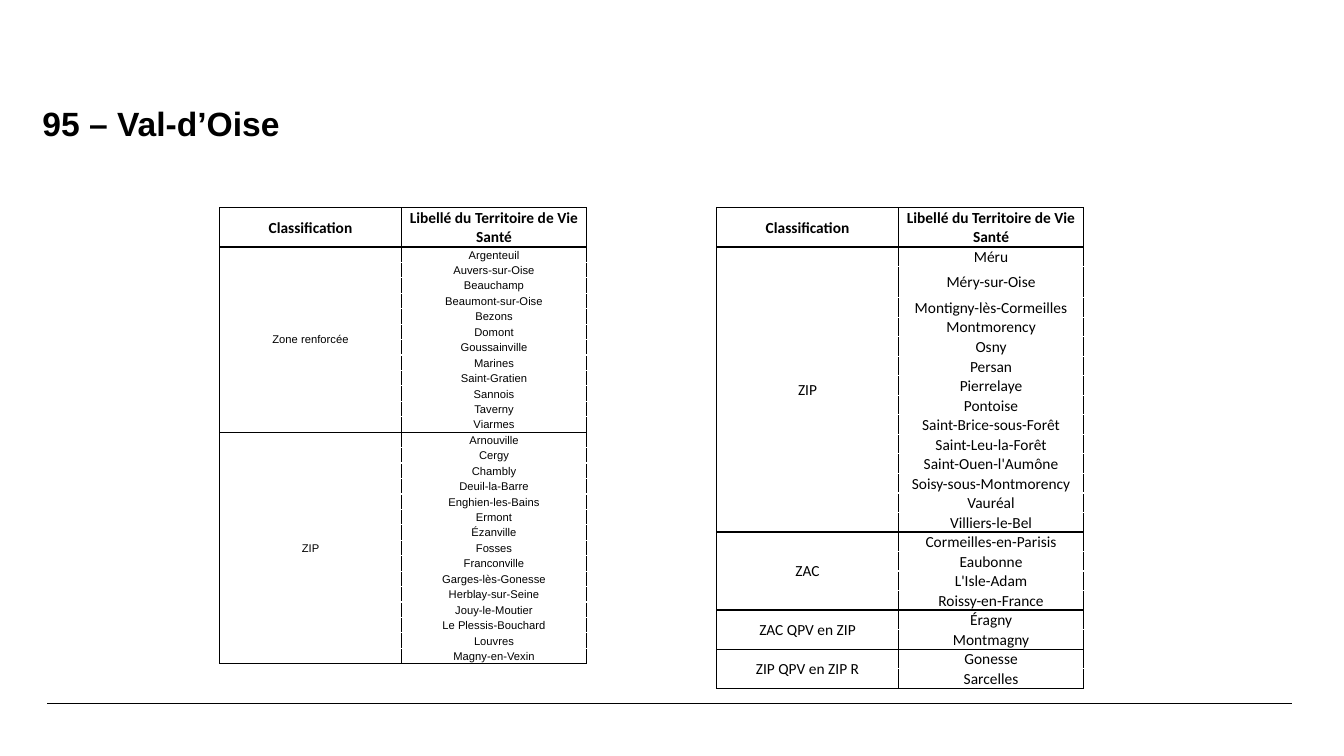
from pptx import Presentation
from pptx.dml.color import RGBColor
from pptx.enum.shapes import MSO_CONNECTOR
from pptx.enum.text import MSO_ANCHOR, PP_ALIGN
from pptx.oxml.ns import qn
from pptx.util import Inches, Pt
from lxml import etree

STRAIGHT = MSO_CONNECTOR.STRAIGHT
CENTER = PP_ALIGN.CENTER
MIDDLE = MSO_ANCHOR.MIDDLE

THEME = {
    "ink": "000000", "paper": "FFFFFF",
    "title": ("Arial", 24, True),
    "header": ("Calibri", 11, True),
    "left body": ("Arial", 8, False),
    "right body": ("Calibri", 11, False),
    "rule": 0.8, "border": 1,
}

HEADERS = ("Classification", "Libellé du Territoire de Vie Santé")
COLUMN_WIDTHS = (1.8, 1.84)
TABLE_TOP = 2.06
HEADER_HEIGHT = 0.39
LEFT_ROW_HEIGHT = (4.53 - HEADER_HEIGHT) / 27
RIGHT_ROW_HEIGHT = 0.15
TALL_ROWS = {"Méru": 0.19, "Méry-sur-Oise": 0.31}

LEFT_ZONES = {
    "Zone renforcée": [
        "Argenteuil", "Auvers-sur-Oise", "Beauchamp", "Beaumont-sur-Oise", "Bezons",
        "Domont", "Goussainville", "Marines", "Saint-Gratien", "Sannois", "Taverny",
        "Viarmes"],
    "ZIP": [
        "Arnouville", "Cergy", "Chambly", "Deuil-la-Barre", "Enghien-les-Bains",
        "Ermont", "Ézanville", "Fosses", "Franconville", "Garges-lès-Gonesse",
        "Herblay-sur-Seine", "Jouy-le-Moutier", "Le Plessis-Bouchard", "Louvres",
        "Magny-en-Vexin"],
}
RIGHT_ZONES = {
    "ZIP": [
        "Méru", "Méry-sur-Oise", "Montigny-lès-Cormeilles", "Montmorency", "Osny",
        "Persan", "Pierrelaye", "Pontoise", "Saint-Brice-sous-Forêt",
        "Saint-Leu-la-Forêt", "Saint-Ouen-l'Aumône", "Soisy-sous-Montmorency",
        "Vauréal", "Villiers-le-Bel"],
    "ZAC": ["Cormeilles-en-Parisis", "Eaubonne", "L'Isle-Adam", "Roissy-en-France"],
    "ZAC QPV en ZIP": ["Éragny", "Montmagny"],
    "ZIP QPV en ZIP R": ["Gonesse", "Sarcelles"],
}


def style_text(paragraph, style):
    for run in paragraph.runs:
        run.font.name, size, run.font.bold = THEME[style]
        run.font.size = Pt(size)
        run.font.color.rgb = RGBColor.from_string(THEME["ink"])


def fill_cell(cell, text, style, top="ink", bottom="ink"):
    """Write one cell; its sides are always ink, top and bottom as named."""
    cell.margin_left = cell.margin_right = cell.margin_top = Inches(0.01)
    cell.margin_bottom = 0
    cell.vertical_anchor = MIDDLE
    cell.text_frame.text = text
    paragraph = cell.text_frame.paragraphs[0]
    paragraph.alignment = CENTER
    style_text(paragraph, style)
    properties = cell._tc.get_or_add_tcPr()
    for side, color in (("L", "ink"), ("R", "ink"), ("T", top), ("B", bottom)):
        border = etree.SubElement(properties, qn(f"a:ln{side}"), w=str(Pt(THEME["border"])))
        solid = etree.SubElement(border, qn("a:solidFill"))
        etree.SubElement(solid, qn("a:srgbClr"), val=THEME[color])
    cell.fill.solid()
    cell.fill.fore_color.rgb = RGBColor.from_string(THEME["paper"])


prs = Presentation()
prs.slide_width, prs.slide_height = Inches(13.33), Inches(7.5)
slide = prs.slides.add_slide(prs.slide_layouts[6])

# Footer rules
for start, end in ((0.47, 12.76), (0.53, 12.81)):
    rule = slide.shapes.add_connector(
        STRAIGHT, Inches(start), Inches(6.98), Inches(end), Inches(6.98))
    rule.line.color.rgb = RGBColor.from_string(THEME["ink"])
    rule.line.width = Pt(THEME["rule"])
    etree.SubElement(rule._element.spPr, qn("a:effectLst"))

# Title
title = slide.shapes.add_textbox(
    Inches(0.29), Inches(1.02), Inches(10.12), Inches(0.68)).text_frame
title.word_wrap = True
title.margin_left = title.margin_right = title.margin_top = title.margin_bottom = 0
title.text = "95 – Val-d’Oise"
heading = title.paragraphs[0]
heading.space_after = Pt(6.7)
heading._p.get_or_add_pPr().set("marL", str(Inches(0.13)))
style_text(heading, "title")

# Classification tables
for left, zones, body, row_height in (
        (2.18, LEFT_ZONES, "left body", LEFT_ROW_HEIGHT),
        (7.11, RIGHT_ZONES, "right body", RIGHT_ROW_HEIGHT)):
    towns = [town for group in zones.values() for town in group]
    heights = [HEADER_HEIGHT] + [TALL_ROWS.get(town, row_height) for town in towns]
    table = slide.shapes.add_table(
        len(heights), len(HEADERS), Inches(left), Inches(TABLE_TOP),
        Inches(sum(COLUMN_WIDTHS)), Inches(sum(heights))).table
    table.first_row = table.horz_banding = False
    for column, width in zip(table.columns, COLUMN_WIDTHS):
        column.width = Inches(width)
    for row, height in zip(table.rows, heights):
        row.height = Inches(height)
    for index, header in enumerate(HEADERS):
        fill_cell(table.cell(0, index), header, "header")

    first = 1
    for zone, group in zones.items():
        last = first + len(group) - 1
        for row, town in enumerate(group, first):
            top = "ink" if row == first else "paper"
            bottom = "ink" if row == last else "paper"
            fill_cell(table.cell(row, 1), town, body, top, bottom)
            if row > first:
                fill_cell(table.cell(row, 0), "", body, top, bottom)
        fill_cell(table.cell(first, 0), zone, body)
        table.cell(first, 0).merge(table.cell(last, 0))
        first = last + 1

prs.save("out.pptx")
